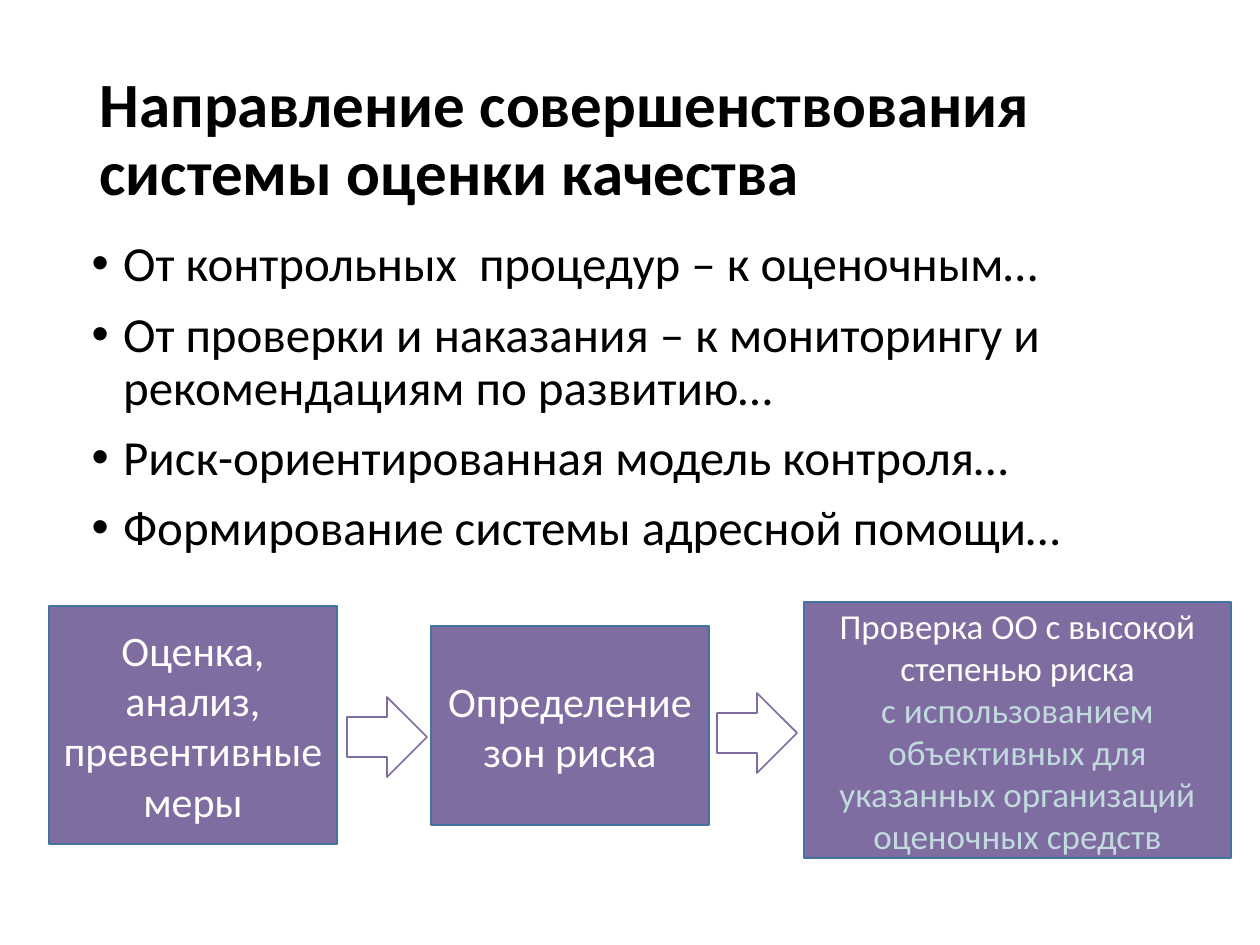
from dataclasses import dataclass

from pptx import Presentation
from pptx import util as u
from pptx.dml.color import RGBColor
from pptx.enum import shapes, text

PX_PER_INCH = 126
FONT = "Calibri"
COLORS = {
    "ink": "000000",
    "white": "FFFFFF",
    "pale": "C1DADD",
    "purple": "7F6CA0",
    "border": "43739E",
}
TITLE = "Направление совершенствования системы оценки качества"
DIRECTIONS = [
    "От контрольных  процедур – к оценочным…",
    "От проверки и наказания – к мониторингу и рекомендациям по развитию…",
    "Риск-ориентированная модель контроля…",
    "Формирование системы адресной помощи…",
]


@dataclass
class Box:
    left: int
    top: int
    width: int
    height: int


@dataclass
class Step:
    box: Box
    size: int
    lines: list[tuple[str, str]]


STEPS = [
    Step(Box(49, 606, 288, 238), 24,
         [("Оценка, анализ, превентивные меры", "white")]),
    Step(Box(431, 626, 278, 199), 24,
         [("Определение зон риска", "white")]),
    Step(Box(804, 602, 427, 256), 20,
         [("Проверка ОО с высокой степенью риска", "white"),
          ("с использованием объективных для указанных организаций "
           "оценочных средств", "pale")]),
]
ARROWS = [Box(347, 697, 80, 80), Box(717, 693, 80, 80)]


def px(n: int) -> u.Emu:
    return u.Emu(round(n * u.Inches(1) / PX_PER_INCH))


def rgb(name: str) -> RGBColor:
    return RGBColor.from_string(COLORS[name])


def place(sp, box: Box) -> None:
    sp.left, sp.top = px(box.left), px(box.top)
    sp.width, sp.height = px(box.width), px(box.height)


def format_runs(p, size: int, color: str, bold: bool = False) -> None:
    for r in p.runs:
        r.font.name = FONT
        r.font.size = u.Pt(size)
        r.font.bold = bold
        r.font.color.rgb = rgb(color)


def fill_title(sp) -> None:
    place(sp, Box(87, 50, 1086, 183))
    tf = sp.text_frame
    tf.text = TITLE
    tf.auto_size = text.MSO_AUTO_SIZE.NONE
    tf.vertical_anchor = text.MSO_ANCHOR.MIDDLE
    p = tf.paragraphs[0]
    p.alignment = text.PP_ALIGN.LEFT
    p.line_spacing = 0.9
    format_runs(p, 36, "ink", bold=True)


def fill_body(sp) -> None:
    place(sp, Box(79, 233, 1086, 339))
    tf = sp.text_frame
    tf.text = "\n".join(DIRECTIONS)
    tf.auto_size = text.MSO_AUTO_SIZE.NONE
    indent = u.Inches(0.25)
    for i, p in enumerate(tf.paragraphs):
        pPr = p._p.get_or_add_pPr()
        pPr.set("marL", str(indent))
        pPr.set("indent", str(-indent))
        p.line_spacing = 0.9
        p.space_before = u.Pt(10 if i else 0)
        format_runs(p, 28, "ink")


def add_outlined(s, kind: shapes.MSO_SHAPE, box: Box, line: str):
    sp = s.shapes.add_shape(kind, px(box.left), px(box.top),
                            px(box.width), px(box.height))
    sp.shadow.inherit = False
    sp.line.color.rgb = rgb(line)
    sp.line.width = u.Pt(1)
    return sp


def add_step(s, step: Step) -> None:
    sp = add_outlined(s, shapes.MSO_SHAPE.RECTANGLE, step.box, "border")
    sp.fill.solid()
    sp.fill.fore_color.rgb = rgb("purple")
    tf = sp.text_frame
    tf.word_wrap = True
    tf.vertical_anchor = text.MSO_ANCHOR.MIDDLE
    tf.text = "\n".join(line for line, _ in step.lines)
    for p, (_, color) in zip(tf.paragraphs, step.lines):
        p.alignment = text.PP_ALIGN.CENTER
        format_runs(p, step.size, color)


def add_arrow(s, box: Box) -> None:
    sp = add_outlined(s, shapes.MSO_SHAPE.RIGHT_ARROW, box, "purple")
    sp.fill.background()


def main() -> None:
    prs = Presentation()
    prs.slide_width, prs.slide_height = u.Inches(10), u.Inches(7.5)
    s = prs.slides.add_slide(prs.slide_layouts[1])
    fill_title(s.shapes.title)
    fill_body(s.placeholders[1])
    for step in STEPS:
        add_step(s, step)
    for box in ARROWS:
        add_arrow(s, box)
    prs.save("out.pptx")


if __name__ == "__main__":
    main()
